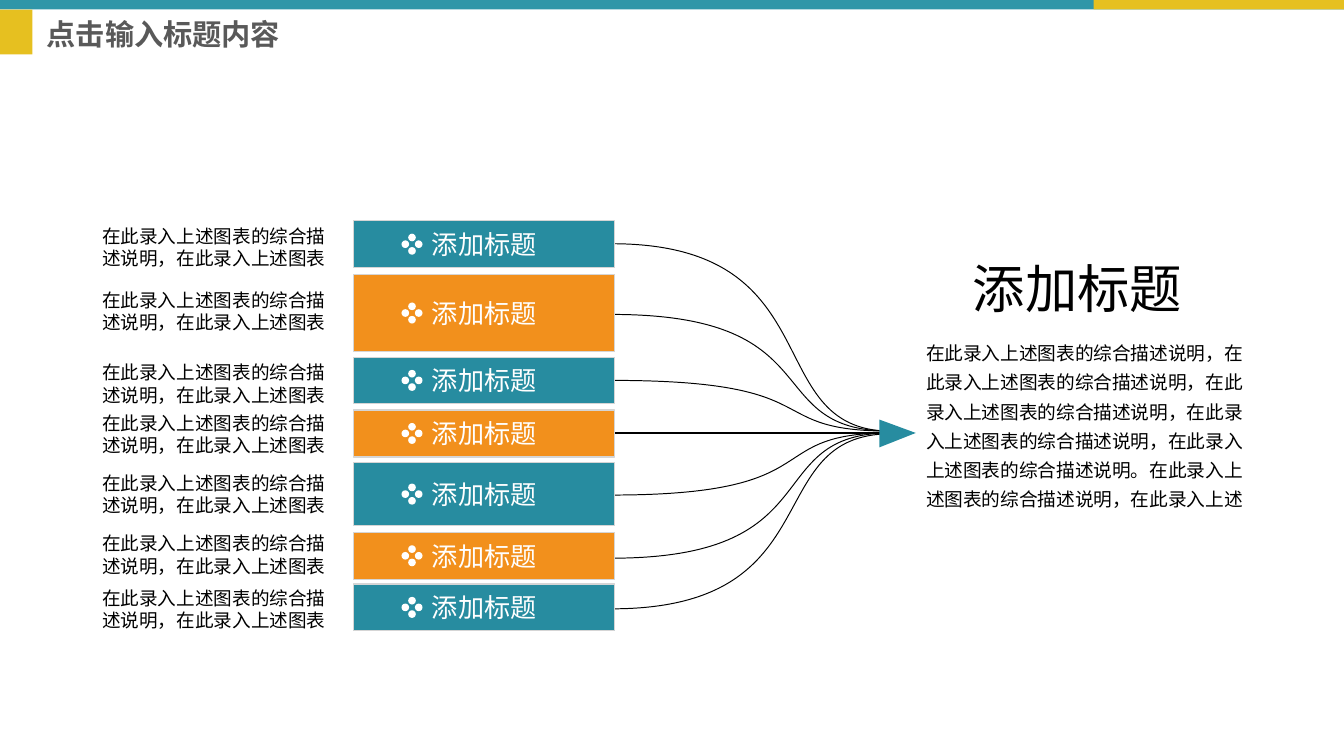
from dataclasses import dataclass
from typing import NamedTuple

from lxml import etree
from pptx import Presentation
from pptx.dml.color import RGBColor
from pptx.enum.shapes import MSO_CONNECTOR, MSO_SHAPE
from pptx.enum.text import MSO_ANCHOR, MSO_AUTO_SIZE, PP_ALIGN
from pptx.oxml.ns import qn
from pptx.util import Inches, Pt

STRAIGHT = MSO_CONNECTOR.STRAIGHT
RECTANGLE, OVAL = MSO_SHAPE.RECTANGLE, MSO_SHAPE.OVAL
TOP, MIDDLE = MSO_ANCHOR.TOP, MSO_ANCHOR.MIDDLE
GROW, FIXED = MSO_AUTO_SIZE.SHAPE_TO_FIT_TEXT, MSO_AUTO_SIZE.NONE
LEFT = PP_ALIGN.LEFT
TITLE_ONLY = 5


@dataclass(frozen=True)
class Theme:
    font: str = "Roboto Condensed"
    teal: str = "278CA0"
    orange: str = "F2901C"
    header_teal: str = "2F96A8"
    header_yellow: str = "E6C020"
    bar_edge: str = "D5D5D5"
    title_grey: str = "595959"
    black: str = "000000"
    white: str = "FFFFFF"
    title_size: float = 22
    summary_heading_size: float = 39.4
    summary_size: float = 14.1
    heading_size: float = 19.7
    description_size: float = 14


class Row(NamedTuple):
    bar_top: float
    bar_height: float
    description_top: float
    curve: tuple = ()


THEME = Theme()
HEADING = "添加标题"
DESCRIPTION = "在此录入上述图表的综合描述说明，在此录入上述图表"
SENTENCE = "在此录入上述图表的综合描述说明"
SUMMARY = "，".join([SENTENCE] * 5) + "。" + SENTENCE + "，在此录入上述"

ROWS = (
    Row(2.31, 0.49, 2.30, (2.55, 4.57, 4.51)),
    Row(2.87, 0.81, 2.97, (3.29, 4.55, 4.51)),
    Row(3.74, 0.48, 3.73, (3.98, 4.53, 4.51)),
    Row(4.29, 0.49, 4.26),
    Row(4.84, 0.66, 4.89, (5.18, 4.51, 4.53)),
    Row(5.57, 0.49, 5.52, (5.84, 4.49, 4.53)),
    Row(6.11, 0.49, 6.09, (6.37, 4.48, 4.54)),
)
BAR_LEFT, BAR_WIDTH = 3.7, 2.73
HEADING_LEFT, HEADING_WIDTH, HEADING_HEIGHT = 4.42, 1.31, 0.43
DOT_SIZE, DOT_SPREAD, DOTS_CENTER = 0.08, 0.07, 4.31
CURVE_START, CURVE_END, ARROW_MIDDLE = 6.4, 9.39, 4.53


def color(value):
    return RGBColor.from_string(value)


def box(left, top, width, height):
    return Inches(left), Inches(top), Inches(width), Inches(height)


def add_block(shapes, kind, bounds, fill, edge=None):
    block = shapes.add_shape(kind, *box(*bounds))
    block.shadow.inherit = False
    block.fill.solid()
    block.fill.fore_color.rgb = color(fill)
    if edge:
        block.line.color.rgb = color(edge)
        block.line.width = Pt(1)
    else:
        block.line.fill.background()


def write_text(frame, content, *, size, ink, bold=False, anchor=TOP, wrap=True,
               spacing=None, before=None, sizing=GROW):
    frame.word_wrap = wrap
    frame.auto_size = sizing
    frame.vertical_anchor = anchor
    paragraph = frame.paragraphs[0]
    paragraph.alignment = LEFT
    paragraph.line_spacing = spacing
    paragraph.space_before = before
    run = paragraph.add_run()
    run.text = content
    run.font.name = THEME.font
    run.font.size = Pt(size)
    run.font.bold = bold
    run.font.color.rgb = color(ink)


def add_text(shapes, bounds, content, **text_format):
    write_text(shapes.add_textbox(*box(*bounds)).text_frame, content, **text_format)


def add_outline(shapes, points, close):
    start, *others = [(Inches(x), Inches(y)) for x, y in points]
    builder = shapes.build_freeform(*start)
    builder.add_line_segments(others, close=close)
    outline = builder.convert_to_shape()
    outline.shadow.inherit = False
    return outline


def add_curve(shapes, start, approach, end):
    points = [(CURVE_START, start), (8.77, start), (7.9, approach), (CURVE_END, end)]
    curve = add_outline(shapes, points, close=False)
    segments = list(curve._element.iter(qn("a:lnTo")))
    track = segments[0].getparent()
    bezier = etree.SubElement(track, qn("a:cubicBezTo"))
    for segment in segments:
        bezier.append(segment[0])
        track.remove(segment)
    curve.fill.background()
    curve.line.color.rgb = color(THEME.black)
    curve.line.width = Pt(0)


def add_straight_line(shapes):
    line = shapes.add_connector(STRAIGHT, Inches(6.33), Inches(ARROW_MIDDLE),
                                Inches(CURVE_END), Inches(ARROW_MIDDLE))
    line.line.color.rgb = color(THEME.black)
    line.line.width = Pt(0)
    etree.SubElement(line._element.spPr, qn("a:effectLst"))


def add_arrowhead(shapes):
    arrowhead = add_outline(shapes, [(9.2, 4.39), (9.58, ARROW_MIDDLE), (9.2, 4.68)], close=True)
    arrowhead.fill.solid()
    arrowhead.fill.fore_color.rgb = color(THEME.teal)
    arrowhead.line.fill.background()


def add_dots(shapes, middle):
    dots = shapes.add_group_shape().shapes
    for across, down in ((0, -1), (1, 0), (-1, 0), (0, 1)):
        left = DOTS_CENTER + across * DOT_SPREAD - DOT_SIZE / 2
        top = middle + down * DOT_SPREAD - DOT_SIZE / 2
        add_block(dots, OVAL, (left, top, DOT_SIZE, DOT_SIZE), THEME.white)


def add_row(shapes, row, fill):
    middle = row.bar_top + row.bar_height / 2
    add_block(shapes, RECTANGLE, (BAR_LEFT, row.bar_top, BAR_WIDTH, row.bar_height),
              fill, THEME.bar_edge)
    add_dots(shapes, middle)
    add_text(shapes, (HEADING_LEFT, middle - HEADING_HEIGHT / 2, HEADING_WIDTH, HEADING_HEIGHT),
             HEADING, size=THEME.heading_size, ink=THEME.white, anchor=MIDDLE, wrap=False)
    add_text(shapes, (0.97, row.description_top, 2.72, 0.57), DESCRIPTION,
             size=THEME.description_size, ink=THEME.black)


def add_header(shapes):
    add_block(shapes, RECTANGLE, (0, 0, 14.06, 0.1), THEME.header_teal)
    add_block(shapes, RECTANGLE, (11.44, 0, 2.62, 0.1), THEME.header_yellow)
    add_block(shapes, RECTANGLE, (0, 0.1, 0.34, 0.47), THEME.header_yellow)
    title = shapes.title
    title.left, title.top, title.width, title.height = box(0.39, 0.14, 3.62, 0.47)
    write_text(title.text_frame, "点击输入标题内容", size=THEME.title_size, ink=THEME.title_grey,
               bold=True, anchor=MIDDLE, spacing=0.9, before=Pt(10), sizing=FIXED)


def main():
    deck = Presentation()
    deck.slide_width, deck.slide_height = Inches(14.06), Inches(7.91)
    shapes = deck.slides.add_slide(deck.slide_layouts[TITLE_ONLY]).shapes
    add_header(shapes)
    for row in ROWS:
        if row.curve:
            add_curve(shapes, *row.curve)
        else:
            add_straight_line(shapes)
    add_arrowhead(shapes)
    for index, row in enumerate(ROWS):
        add_row(shapes, row, THEME.orange if index % 2 else THEME.teal)
    add_text(shapes, (10.08, 2.63, 2.41, 0.76), HEADING,
             size=THEME.summary_heading_size, ink=THEME.black, wrap=False)
    add_text(shapes, (9.59, 3.46, 3.64, 1.95), SUMMARY,
             size=THEME.summary_size, ink=THEME.black, spacing=1.3)
    deck.save("out.pptx")


if __name__ == "__main__":
    main()
